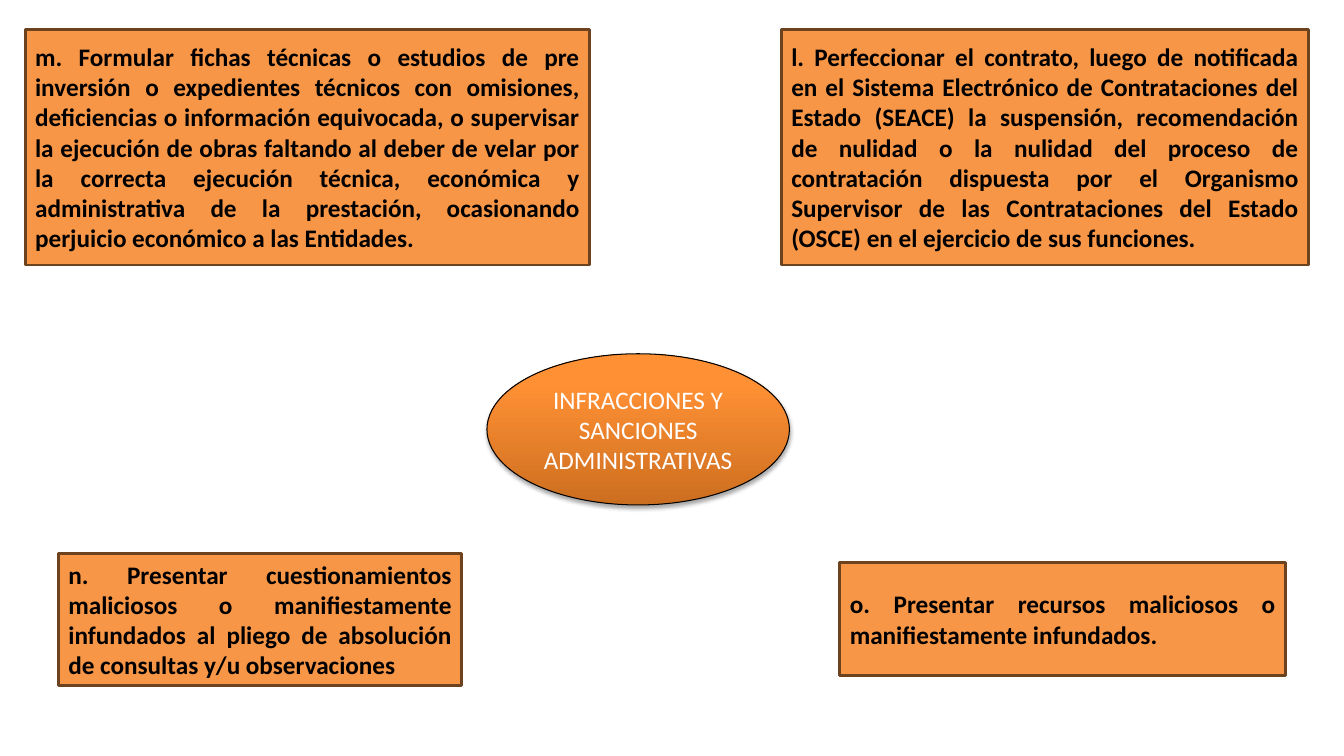
from copy import deepcopy

from pptx import Presentation
from pptx.dml.color import RGBColor
from pptx.enum.shapes import MSO_SHAPE as Shape
from pptx.enum.text import MSO_ANCHOR as Anchor, PP_ALIGN as Align
from pptx.oxml import parse_xml
from pptx.oxml.ns import nsdecls, qn
from pptx.util import Inches, Pt


def color(hex_value):
    return RGBColor.from_string(hex_value)


def add_label(page, kind, place, text, align, text_color, line_color, line_width):
    shape = page.shapes.add_shape(kind, *[Inches(value) for value in place])
    shape.shadow.inherit = False
    shape.line.color.rgb = color(line_color)
    shape.line.width = Pt(line_width)
    frame = shape.text_frame
    frame.text = text
    frame.word_wrap = True
    frame.vertical_anchor = Anchor.MIDDLE
    para = frame.paragraphs[0]
    para.alignment = align
    font = para.runs[0].font
    font.name = "Calibri"
    font.size = Pt(18)
    font.color.rgb = color(text_color)
    return shape


deck = Presentation()
deck.slide_width = Inches(13.33)
deck.slide_height = Inches(7.5)
page = deck.slides.add_slide(deck.slide_layouts[6])

topic = add_label(page, Shape.OVAL, (4.83, 3.51, 3, 1.5),
                  "INFRACCIONES Y SANCIONES ADMINISTRATIVAS",
                  Align.CENTER, "FFFFFF", "000000", 0.75)
topic.fill.gradient()
topic.fill.gradient_angle = 90
first_stop = topic.element.spPr.find(".//" + qn("a:gs"))
first_stop.addnext(deepcopy(first_stop))
stops = [(0, "CC6E20"), (0.8, "FF9034"), (1, "FF9136")]
for stop, (position, hex_value) in zip(topic.fill.gradient_stops, stops):
    stop.position = position
    stop.color.rgb = color(hex_value)

topic.element.spPr.find(qn("a:effectLst")).append(parse_xml(
    f'<a:outerShdw {nsdecls("a")} blurRad="{Pt(3.1)}" dist="{Pt(1.8)}" '
    'dir="5400000" rotWithShape="0"><a:srgbClr val="000000">'
    '<a:alpha val="35000"/></a:srgbClr></a:outerShdw>'))

infractions = [
    ((8.33, 5.58, 4.42, 1.12),
     "o. Presentar recursos maliciosos o manifiestamente infundados."),
    ((0.58, 5.49, 4, 1.31),
     "n. Presentar cuestionamientos maliciosos o manifiestamente infundados "
     "al pliego de absolución de consultas y/u observaciones"),
    ((0.25, 0.29, 5.6, 2.34),
     "m. Formular fichas técnicas o estudios de pre inversión o expedientes "
     "técnicos con omisiones, deficiencias o información equivocada, o "
     "supervisar la ejecución de obras faltando al deber de velar por la "
     "correcta ejecución técnica, económica y administrativa de la "
     "prestación, ocasionando perjuicio económico a las Entidades."),
    ((7.75, 0.29, 5.23, 2.34),
     "l. Perfeccionar el contrato, luego de notificada en el Sistema "
     "Electrónico de Contrataciones del Estado (SEACE) la suspensión, "
     "recomendación de nulidad o la nulidad del proceso de contratación "
     "dispuesta por el Organismo Supervisor de las Contrataciones del "
     "Estado (OSCE) en el ejercicio de sus funciones."),
]
for place, text in infractions:
    box = add_label(page, Shape.RECTANGLE, place, text,
                    Align.JUSTIFY, "000000", "6C421F", 2)
    box.fill.solid()
    box.fill.fore_color.rgb = color("F79646")
    box.text_frame.paragraphs[0].runs[0].font.bold = True

deck.save("out.pptx")
